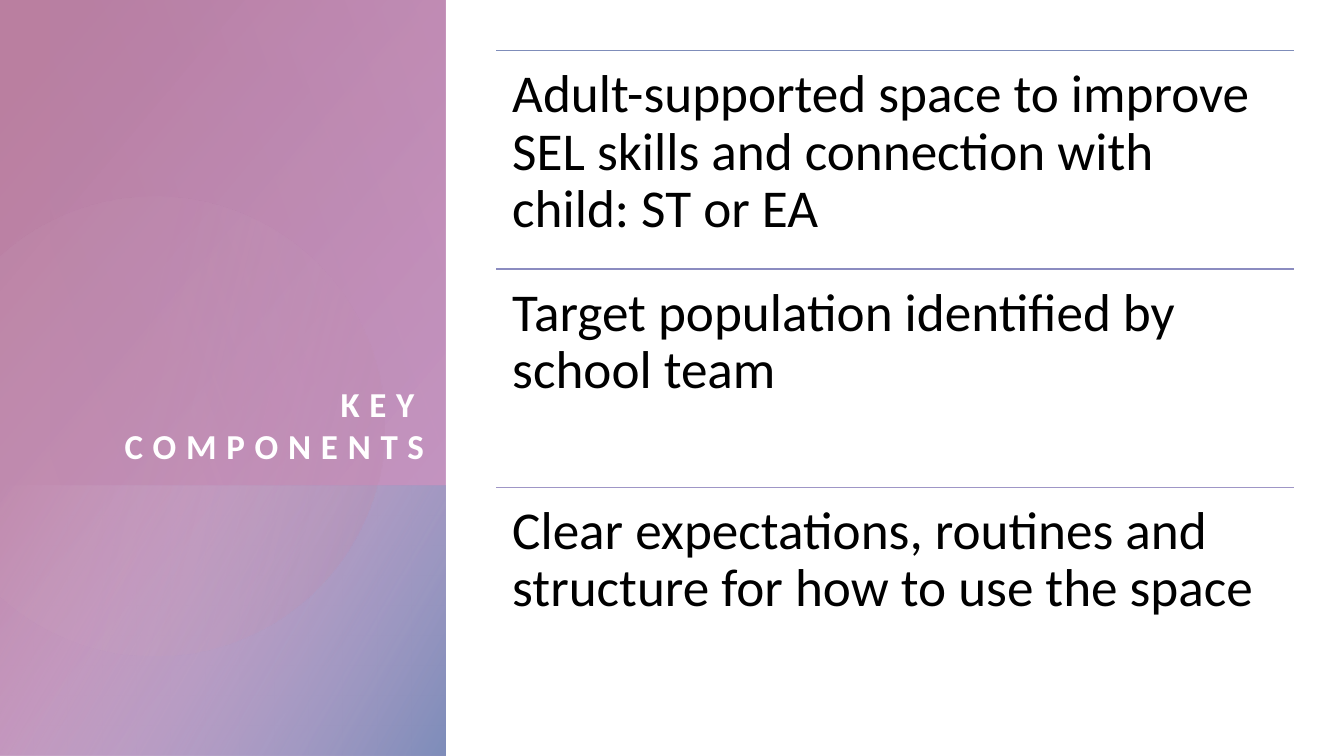
from math import acos, cos, pi, sin

from lxml.etree import SubElement
from pptx import Presentation
from pptx.dml.color import RGBColor
from pptx.enum.shapes import MSO_CONNECTOR, MSO_SHAPE
from pptx.enum.text import MSO_ANCHOR, MSO_AUTO_SIZE, PP_ALIGN
from pptx.oxml.ns import qn
from pptx.util import Cm, Pt

TITLE = "KEY COMPONENTS"
COMPONENTS = [
    ("Adult-supported space to improve SEL skills and connection with child: ST or EA", "blue"),
    ("Target population identified by school team", "periwinkle"),
    ("Clear expectations, routines and structure for how to use the space", "lilac"),
]
COLORS = {
    "rose": "BA7FA0", "orchid": "C492C3", "pale": "DCBEDB", "blush": "D6B2C6",
    "violet": "A27FBA", "blue": "7F8DBA", "periwinkle": "8B8CC0", "lilac": "9F96C6",
    "white": "FFFFFF", "black": "000000",
}
FONT = "Calibri"
SLIDE_W, SLIDE_H = 33.87, 19.05
PANEL_W, SPLIT_Y = 11.23, 12.23
GLOW_X = 1.27
DISC_X, DISC_Y, DISC_R = 3.91, 10.74, 5.79
LIST_X, LIST_Y, LIST_W, ROW_H = 12.5, 1.28, 20.1, 5.5
INSET = 0.41


def rgb(name):
    return RGBColor.from_string(COLORS[name])


def paint(sp, stops, angle):
    sp.shadow.inherit = False
    sp.line.fill.background()
    sp.fill.gradient()
    sp.fill.gradient_angle = 360 - angle
    for stop, (position, color, _) in zip(sp.fill.gradient_stops, stops):
        stop.position = position / 100
        stop.color.rgb = rgb(color)
    tints = sp._element.spPr.iter(qn("a:srgbClr"))
    for tint, (_, _, opacity) in zip(list(tints), stops):
        SubElement(tint, qn("a:alpha")).set("val", str(opacity * 1000))


def add_panel(s, x, y, w, h, stops, angle):
    sp = s.shapes.add_shape(MSO_SHAPE.RECTANGLE, Cm(x), Cm(y), Cm(w), Cm(h))
    paint(sp, stops, angle)


def add_disc(s, stops, angle, steps=90):
    cut = acos(-DISC_X / DISC_R)
    angles = [-cut + 2 * cut * i / steps for i in range(steps + 1)]
    points = [(Cm(DISC_X + DISC_R * cos(a)), Cm(DISC_Y + DISC_R * sin(a))) for a in angles]
    outline = s.shapes.build_freeform(*points[0])
    outline.add_line_segments(points[1:], close=True)
    paint(outline.convert_to_shape(), stops, angle)


def write(sp, text, size, color, bold=False, align=PP_ALIGN.LEFT,
          anchor=MSO_ANCHOR.TOP, inset=0, leading=1.0, tracking=0):
    tf = sp.text_frame
    tf.word_wrap = True
    tf.auto_size = MSO_AUTO_SIZE.NONE
    tf.vertical_anchor = anchor
    tf.margin_left = tf.margin_right = tf.margin_top = tf.margin_bottom = Cm(inset)
    p = tf.paragraphs[0]
    p.alignment = align
    p.line_spacing = leading
    r = p.add_run()
    r.text = text
    r.font.name = FONT
    r.font.size = Pt(size)
    r.font.bold = bold
    r.font.color.rgb = rgb(color)
    if tracking:
        r._r.get_or_add_rPr().set("spc", str(tracking * 100))


def add_rule(s, x, y, w, color):
    line = s.shapes.add_connector(MSO_CONNECTOR.STRAIGHT, Cm(x), Cm(y), Cm(x + w), Cm(y))
    line.line.color.rgb = rgb(color)
    line.line.width = Pt(1)
    SubElement(line._element.spPr, qn("a:effectLst"))


def main():
    prs = Presentation()
    prs.slide_width, prs.slide_height = Cm(SLIDE_W), Cm(SLIDE_H)
    s = prs.slides.add_slide(prs.slide_layouts[5])

    add_panel(s, 0, 0, PANEL_W, SLIDE_H, [(8, "rose", 100), (100, "orchid", 89)], 40)
    add_panel(s, 0, SPLIT_Y, PANEL_W, SLIDE_H - SPLIT_Y,
              [(0, "pale", 0), (99, "blue", 100)], 30)
    add_disc(s, [(36, "blush", 6), (100, "rose", 26)], 14)
    add_panel(s, GLOW_X, 0, PANEL_W - GLOW_X, SPLIT_Y,
              [(0, "orchid", 29), (100, "violet", 0)], 160)

    title = s.shapes.title
    title.left, title.top, title.width, title.height = Cm(1.27), Cm(2.41), Cm(9.42), Cm(9.35)
    write(title, TITLE, 25, "white", bold=True, align=PP_ALIGN.RIGHT,
          anchor=MSO_ANCHOR.BOTTOM, tracking=7)
    s.shapes._spTree.append(title._element)

    for i, (text, color) in enumerate(COMPONENTS):
        y = LIST_Y + i * ROW_H
        add_rule(s, LIST_X, y, LIST_W, color)
        box = s.shapes.add_textbox(Cm(LIST_X), Cm(y), Cm(LIST_W), Cm(ROW_H))
        write(box, text, 38, "black", inset=INSET, leading=0.9)

    prs.save("out.pptx")


if __name__ == "__main__":
    main()
